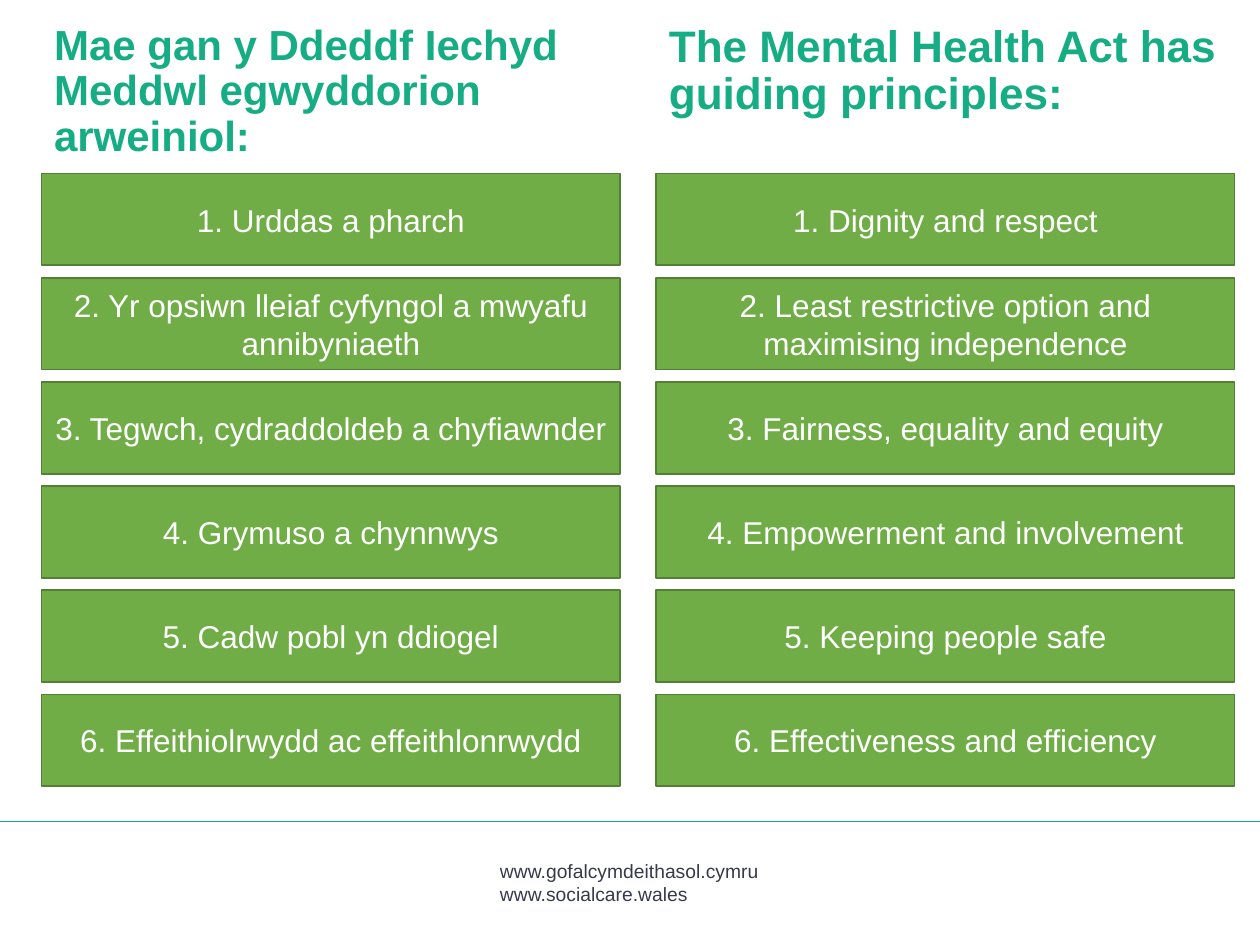
"""Build a bilingual slide of the guiding principles of the Mental Health Act."""
import pptx
import pptx.dml.color
import pptx.enum.shapes
import pptx.enum.text
import pptx.oxml
import pptx.util
from pptx.enum.text import MSO_ANCHOR, PP_ALIGN
from pptx.util import Cm

COLOURS = {
    "heading": "16AD85",
    "box": "70AD47",
    "border": "538035",
    "box_text": "FFFFFF",
    "address": "37394C",
}
WELSH_PRINCIPLES = [
    "1. Urddas a pharch",
    "2. Yr opsiwn lleiaf cyfyngol a mwyafu annibyniaeth",
    "3. Tegwch, cydraddoldeb a chyfiawnder",
    "4. Grymuso a chynnwys",
    "5. Cadw pobl yn ddiogel",
    "6. Effeithiolrwydd ac effeithlonrwydd",
]
ENGLISH_PRINCIPLES = [
    "1. Dignity and respect",
    "2. Least restrictive option and maximising independence",
    "3. Fairness, equality and equity",
    "4. Empowerment and involvement",
    "5. Keeping people safe",
    "6. Effectiveness and efficiency",
]
WELSH_LEFT, ENGLISH_LEFT = Cm(0.84), Cm(13.23)
COLUMN_WIDTH = Cm(11.66)
HEADING_TOP, HEADING_HEIGHT = Cm(0.36), Cm(2.24)
FIRST_BOX_TOP, BOX_HEIGHT, BOX_PITCH = Cm(3.5), Cm(1.85), Cm(2.1)


class SlideBuilder:
    """Hold the style and the current slide."""

    def __init__(self, slide, font="Arial"):
        self.slide = slide
        self.font = font

    def colour(self, name):
        return pptx.dml.color.RGBColor.from_string(COLOURS[name])

    def set_text(self, shape, text, size, colour, bold=False,
                 align=PP_ALIGN.LEFT, anchor=MSO_ANCHOR.TOP, spacing=None):
        frame = shape.text_frame
        frame.text = text
        frame.word_wrap = True
        frame.auto_size = pptx.enum.text.MSO_AUTO_SIZE.NONE
        frame.vertical_anchor = anchor
        for paragraph in frame.paragraphs:
            paragraph.alignment = align
            paragraph.line_spacing = spacing
            for run in paragraph.runs:
                run.font.name = self.font
                run.font.size = pptx.util.Pt(size)
                run.font.bold = bold
                run.font.color.rgb = self.colour(colour)

    def title(self, text, left, size):
        shape = self.slide.shapes.title
        shape.left, shape.top = left, HEADING_TOP
        shape.width, shape.height = COLUMN_WIDTH, HEADING_HEIGHT
        self.set_text(shape, text, size, "heading", bold=True, spacing=0.9)

    def heading(self, text, left, size):
        shape = self.slide.shapes.add_textbox(left, HEADING_TOP, COLUMN_WIDTH, HEADING_HEIGHT)
        self.set_text(shape, text, size, "heading", bold=True, spacing=0.9)

    def principles(self, texts, left):
        for row, text in enumerate(texts):
            shape = self.slide.shapes.add_shape(
                pptx.enum.shapes.MSO_SHAPE.RECTANGLE,
                left, FIRST_BOX_TOP + row * BOX_PITCH, COLUMN_WIDTH, BOX_HEIGHT,
            )
            shape.shadow.inherit = False
            shape.fill.solid()
            shape.fill.fore_color.rgb = self.colour("box")
            shape.line.color.rgb = self.colour("border")
            shape.line.width = pptx.util.Pt(1)
            self.set_text(shape, text, 18, "box_text",
                          align=PP_ALIGN.CENTER, anchor=MSO_ANCHOR.MIDDLE)

    def rule(self, top, width):
        connector = self.slide.shapes.add_connector(
            pptx.enum.shapes.MSO_CONNECTOR.STRAIGHT, 0, top, width, top
        )
        connector.line.color.rgb = self.colour("heading")
        connector.line.width = pptx.util.Pt(1)
        effects = pptx.oxml.parse_xml(
            '<a:effectLst xmlns:a="http://schemas.openxmlformats.org/drawingml/2006/main"/>'
        )
        connector._element.spPr.append(effects)

    def addresses(self, text, left, top, width, height):
        shape = self.slide.shapes.add_textbox(left, top, width, height)
        self.set_text(shape, text, 11, "address")


def main():
    presentation = pptx.Presentation()
    presentation.slide_width, presentation.slide_height = Cm(25.4), Cm(19.05)
    builder = SlideBuilder(presentation.slides.add_slide(presentation.slide_layouts[5]))
    builder.addresses(
        "www.gofalcymdeithasol.cymru\nwww.socialcare.wales",
        Cm(9.83), Cm(17.2), Cm(5.74), Cm(1.17),
    )
    builder.rule(Cm(16.56), presentation.slide_width)
    builder.title("The Mental Health Act has guiding principles:", ENGLISH_LEFT, 25.2)
    builder.principles(ENGLISH_PRINCIPLES, ENGLISH_LEFT)
    builder.heading("Mae gan y Ddeddf Iechyd Meddwl egwyddorion arweiniol:", WELSH_LEFT, 24)
    builder.principles(WELSH_PRINCIPLES, WELSH_LEFT)
    presentation.save("out.pptx")


if __name__ == "__main__":
    main()
